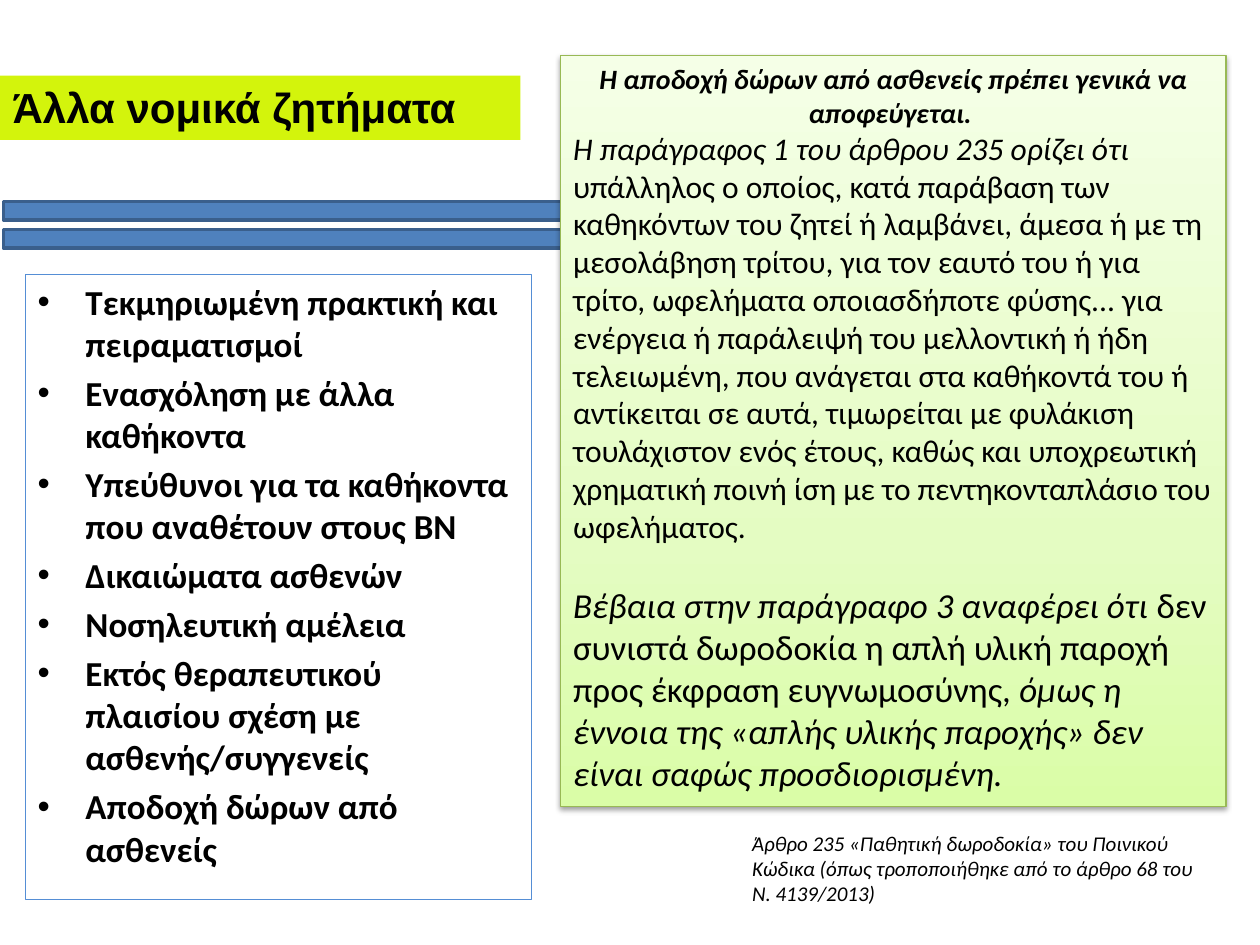
from copy import deepcopy
from dataclasses import dataclass

from lxml.etree import SubElement
from pptx import Presentation
from pptx.dml.color import RGBColor
from pptx.enum.shapes import MSO_SHAPE
from pptx.enum.text import MSO_ANCHOR, MSO_AUTO_SIZE, PP_ALIGN
from pptx.oxml.ns import qn
from pptx.shapes.autoshape import Shape
from pptx.util import Emu, Inches, Pt

COLUMNS, ROWS = 100, 75
SLIDE_WIDTH, SLIDE_HEIGHT = Inches(10), Inches(7.5)
COLORS = {
    "text": "000000", "title": "D3F40C", "bars": "4F81BD", "bars_line": "3A5F8C",
    "list_line": "558ED5", "panel_line": "98B955", "shadow": "000000",
}
PANEL_STOPS = [(0, "DAFDA7"), (0.35, "E4FCC2"), (1, "F5FFE7")]


@dataclass
class Frame:
    """A rectangle in grid columns and rows."""
    left: float
    top: float
    width: float
    height: float

    def lengths(self) -> tuple[Emu, Emu, Emu, Emu]:
        column, row = SLIDE_WIDTH / COLUMNS, SLIDE_HEIGHT / ROWS
        return (Emu(round(self.left * column)), Emu(round(self.top * row)),
                Emu(round(self.width * column)), Emu(round(self.height * row)))


@dataclass
class Run:
    text: str
    italic: bool = False


TITLE = Frame(0, 6, 41.3, 5.1)
BARS = Frame(-14.6, 14.7, 112.2, 6.3)
ISSUES = Frame(2, 21.8, 40.2, 49.6)
PANEL = Frame(44.5, 4.4, 52.8, 59.6)
SOURCE = Frame(58.7, 65.4, 37.9, 7.1)

ISSUE_TEXTS = [
    "Τεκμηριωμένη πρακτική και πειραματισμοί",
    "Ενασχόληση με άλλα καθήκοντα",
    "Υπεύθυνοι για τα καθήκοντα που αναθέτουν στους ΒΝ",
    "Δικαιώματα ασθενών",
    "Νοσηλευτική αμέλεια",
    "Εκτός θεραπευτικού πλαισίου σχέση με ασθενής/συγγενείς",
    "Αποδοχή δώρων από ασθενείς",
]
PANEL_HEADING = [Run("Η αποδοχή δώρων από ασθενείς πρέπει γενικά να αποφεύγεται. ", True)]
PARAGRAPH_ONE = [
    Run("Η παράγραφος 1 του άρθρου 235 ορίζει ότι", True),
    Run(" υπάλληλος ο οποίος, κατά παράβαση των καθηκόντων του ζητεί ή λαμβάνει, άμεσα ή με τη "
        "μεσολάβηση τρίτου, για τον εαυτό του ή για τρίτο, ωφελήματα οποιασδήποτε φύσης... για "
        "ενέργεια ή παράλειψή του μελλοντική ή ήδη τελειωμένη, που ανάγεται στα καθήκοντά του ή "
        "αντίκειται σε αυτά, τιμωρείται με φυλάκιση τουλάχιστον ενός έτους, καθώς και "
        "υποχρεωτική χρηματική ποινή ίση με το πεντηκονταπλάσιο του ωφελήματος."),
]
PARAGRAPH_THREE = [
    Run("Βέβαια στην παράγραφο 3 αναφέρει ότι", True),
    Run(" δεν συνιστά δωροδοκία η απλή υλική παροχή προς έκφραση ευγνωμοσύνης,"),
    Run(" όμως η έννοια της «απλής υλικής παροχής» δεν είναι σαφώς προσδιορισμένη.", True),
]
SOURCE_TEXT = [Run("Άρθρο 235 «Παθητική δωροδοκία» του Ποινικού Κώδικα (όπως τροποποιήθηκε "
                   "από το άρθρο 68 του Ν. 4139/2013)", True)]


def color(name: str) -> RGBColor:
    return RGBColor.from_string(COLORS[name])


def prepare_text(shape: Shape) -> None:
    frame = shape.text_frame
    frame.word_wrap = True
    frame.auto_size = MSO_AUTO_SIZE.NONE
    frame.vertical_anchor = MSO_ANCHOR.TOP


def write(shape: Shape, runs: list[Run], *, size: float, font: str = "Calibri",
          bold: bool = False, align: PP_ALIGN = PP_ALIGN.LEFT,
          before: float = 0, bullet: bool = False) -> None:
    """Add one paragraph, using the empty first one if there is one."""
    frame = shape.text_frame
    paragraph = frame.add_paragraph() if frame.text else frame.paragraphs[0]
    paragraph.alignment = align
    paragraph.space_before = Pt(before)
    for part in runs:
        run = paragraph.add_run()
        run.text = part.text
        run.font.name, run.font.size = font, Pt(size)
        run.font.bold, run.font.italic = bold, part.italic
        run.font.color.rgb = color("text")
    if bullet:
        properties = paragraph._p.get_or_add_pPr()
        properties.set("marL", str(Inches(0.38)))
        properties.set("indent", str(-Inches(0.38)))
        SubElement(properties, qn("a:buFont"), typeface="Arial")
        SubElement(properties, qn("a:buChar"), char="•")


def add_box(slide, kind: MSO_SHAPE, frame: Frame, line: str, width: float,
            fill: str | None = None) -> Shape:
    shape = slide.shapes.add_shape(kind, *frame.lengths())
    shape.shadow.inherit = False
    shape.line.color.rgb = color(line)
    shape.line.width = Pt(width)
    if fill:
        shape.fill.solid()
        shape.fill.fore_color.rgb = color(fill)
    else:
        shape.fill.background()
    prepare_text(shape)
    return shape


def shade_panel(shape: Shape) -> None:
    """Give the panel its upward gradient and its soft shadow."""
    shape.fill.gradient()
    shape.fill.gradient_angle = 90
    stop_list = shape._element.spPr.find(qn("a:gradFill")).find(qn("a:gsLst"))
    stop_list.append(deepcopy(stop_list[-1]))
    for stop, (position, value) in zip(shape.fill.gradient_stops, PANEL_STOPS):
        stop.position = position
        stop.color.rgb = RGBColor.from_string(value)
    effects = shape._element.spPr.find(qn("a:effectLst"))
    shadow = SubElement(effects, qn("a:outerShdw"), blurRad=str(Pt(3.1)), dist=str(Pt(1.6)),
                        dir="5400000", rotWithShape="0")
    tint = SubElement(shadow, qn("a:srgbClr"), val=COLORS["shadow"])
    SubElement(tint, qn("a:alpha"), val="38000")


def main() -> None:
    presentation = Presentation()
    presentation.slide_width, presentation.slide_height = SLIDE_WIDTH, SLIDE_HEIGHT
    slide = presentation.slides.add_slide(presentation.slide_layouts[5])

    # Title
    title = slide.shapes.title
    title.left, title.top, title.width, title.height = TITLE.lengths()
    title.fill.solid()
    title.fill.fore_color.rgb = color("title")
    prepare_text(title)
    write(title, [Run("Άλλα νομικά ζητήματα")], size=24, font="Arial", bold=True)

    # Double bar
    add_box(slide, MSO_SHAPE.MATH_EQUAL, BARS, "bars_line", 2, "bars")

    # List of issues
    issues = add_box(slide, MSO_SHAPE.RECTANGLE, ISSUES, "list_line", 0.75)
    for text in ISSUE_TEXTS:
        write(issues, [Run(text)], size=20, bold=True, before=4, bullet=True)

    # Panel on the law
    panel = add_box(slide, MSO_SHAPE.RECTANGLE, PANEL, "panel_line", 0.75)
    shade_panel(panel)
    write(panel, PANEL_HEADING, size=16, bold=True, align=PP_ALIGN.CENTER)
    write(panel, PARAGRAPH_ONE, size=18)
    write(panel, PARAGRAPH_THREE, size=20, before=22)

    # Source of the law
    source = slide.shapes.add_textbox(*SOURCE.lengths())
    prepare_text(source)
    write(source, SOURCE_TEXT, size=12)

    presentation.save("out.pptx")


if __name__ == "__main__":
    main()
